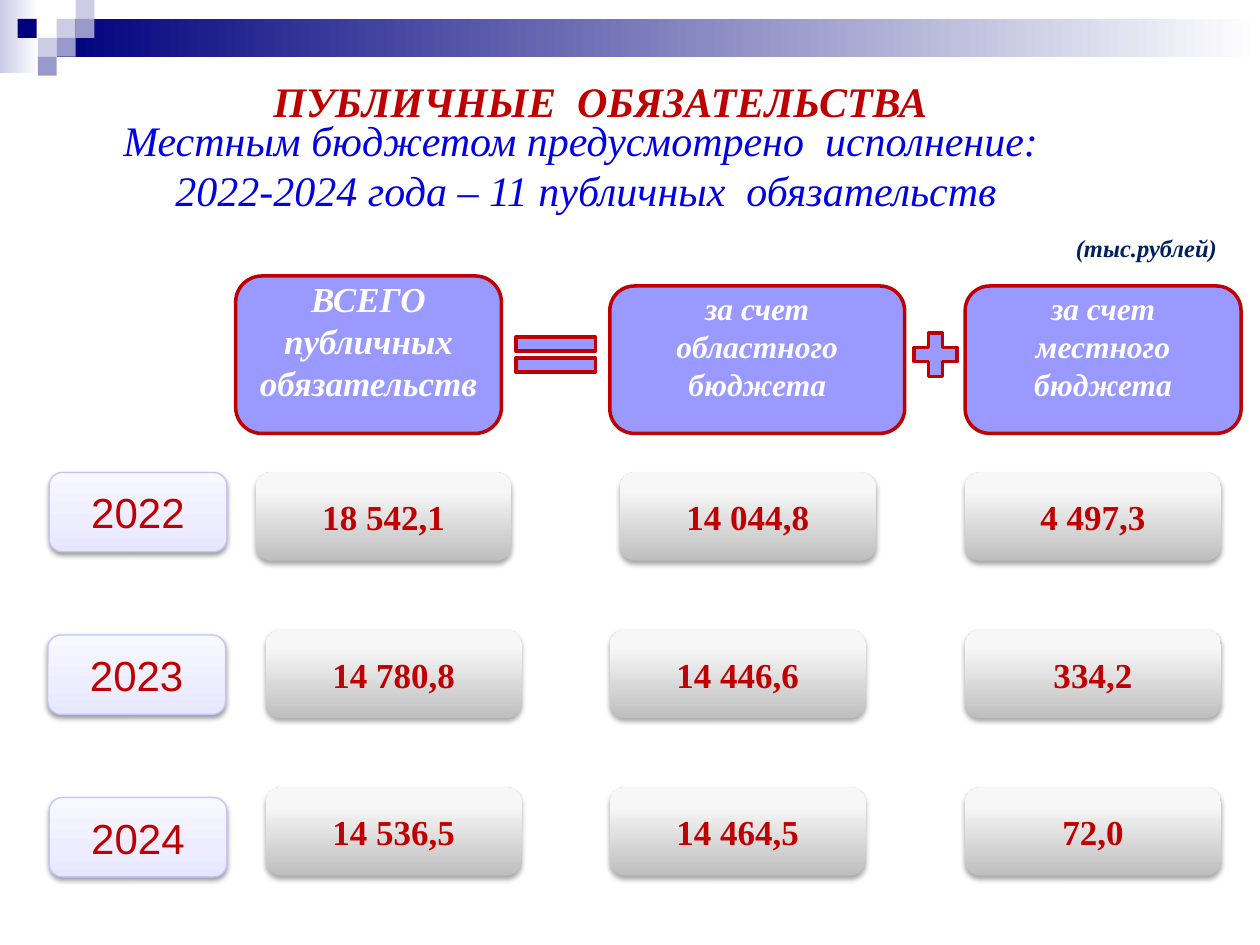
import pptx
import pptx.dml.color
import pptx.enum.shapes
import pptx.enum.text
import pptx.oxml
import pptx.oxml.ns
import pptx.util
from lxml import etree

Inches = pptx.util.Inches
Pt = pptx.util.Pt
RGBColor = pptx.dml.color.RGBColor
Shape = pptx.enum.shapes.MSO_SHAPE
Align = pptx.enum.text.PP_ALIGN
Anchor = pptx.enum.text.MSO_ANCHOR
qn = pptx.oxml.ns.qn

WHITE = RGBColor(0xFF, 0xFF, 0xFF)
NAVY = RGBColor(0x00, 0x00, 0x7D)
PALE = RGBColor(0xCC, 0xCC, 0xE6)
LAVENDER = RGBColor(0x99, 0x99, 0xCC)
VIOLET = RGBColor(0x99, 0x99, 0xFF)
RED = RGBColor(0xC0, 0x00, 0x00)
BLUE = RGBColor(0x00, 0x00, 0xE4)
DARK_BLUE = RGBColor(0x00, 0x20, 0x60)
YEAR_LINE = RGBColor(0xC4, 0xC4, 0xFB)
BLACK = RGBColor(0x00, 0x00, 0x00)
GRAY_STOPS = [(0, RGBColor(0xBE, 0xBE, 0xBE)), (80, RGBColor(0xF7, 0xF7, 0xF7)),
              (100, RGBColor(0xF8, 0xF8, 0xF8))]
YEAR_STOPS = [(0, RGBColor(0xE6, 0xE6, 0xFF)), (35, RGBColor(0xED, 0xED, 0xFF)),
              (100, RGBColor(0xF8, 0xF8, 0xFF))]


def write_text(frame, text, size=20, color=RED, font="Times New Roman", bold=False,
               italic=False, align=Align.CENTER, anchor=Anchor.MIDDLE, wrap=True):
    frame.word_wrap = wrap
    frame.vertical_anchor = anchor
    for index, line in enumerate(text.split("\n")):
        paragraph = frame.paragraphs[0] if index == 0 else frame.add_paragraph()
        paragraph.alignment = align
        run = paragraph.add_run()
        run.text = line
        run.font.name = font
        run.font.size = Pt(size)
        run.font.bold = bold
        run.font.italic = italic
        run.font.color.rgb = color


class BudgetSlide:
    def __init__(self, presentation):
        self.slide = presentation.slides.add_slide(presentation.slide_layouts[5])

    def title(self, box, text, **style):
        shape = self.slide.shapes.title
        shape.left, shape.top, shape.width, shape.height = map(Inches, box)
        write_text(shape.text_frame, text, anchor=Anchor.TOP, **style)

    def label(self, box, text, **style):
        shape = self.slide.shapes.add_textbox(*map(Inches, box))
        write_text(shape.text_frame, text, anchor=Anchor.TOP, **style)

    def block(self, kind, box, fill, line=None, line_width=2):
        shape = self.slide.shapes.add_shape(kind, *map(Inches, box))
        shape.shadow.inherit = False
        shape.fill.solid()
        shape.fill.fore_color.rgb = fill
        if line is None:
            shape.line.fill.background()
        else:
            shape.line.color.rgb = line
            shape.line.width = Pt(line_width)
        return shape

    def gradient(self, shape, stops, angle=0):
        shape.fill.gradient()
        shape.fill.gradient_angle = angle
        stop_list = shape.element.spPr.find(qn("a:gradFill")).find(qn("a:gsLst"))
        for stop in list(stop_list):
            stop_list.remove(stop)
        for position, color in stops:
            stop = etree.SubElement(stop_list, qn("a:gs"), pos=str(position * 1000))
            etree.SubElement(stop, qn("a:srgbClr"), val=str(color))

    def shadow(self, shape, opacity, blur, distance):
        effects = shape.element.spPr.find(qn("a:effectLst"))
        outer = etree.SubElement(effects, qn("a:outerShdw"), blurRad=str(Pt(blur)),
                                 dist=str(Pt(distance)), dir="5400000", rotWithShape="0")
        color = etree.SubElement(outer, qn("a:srgbClr"), val=str(BLACK))
        etree.SubElement(color, qn("a:alpha"), val=str(opacity * 1000))

    def band(self, box, color):
        shape = self.block(Shape.RECTANGLE, box, color)
        self.gradient(shape, [(0, color), (100, WHITE)])

    def heading(self, box, text, size):
        shape = self.block(Shape.ROUNDED_RECTANGLE, box, VIOLET, RED)
        frame = shape.text_frame
        frame.margin_top = 0
        frame.margin_bottom = Inches(0.22)
        write_text(frame, text, size=size, color=WHITE, bold=True, italic=True)

    def year(self, left, top, text):
        shape = self.block(Shape.ROUNDED_RECTANGLE, (left, top, 1.41, 0.63), WHITE, YEAR_LINE, 0.75)
        self.gradient(shape, YEAR_STOPS, 90)
        self.shadow(shape, 38, 3.1, 1.6)
        write_text(shape.text_frame, text, size=24, font="Arial")

    def amount(self, left, top, text):
        shape = self.block(Shape.ROUNDED_RECTANGLE, (left, top, 2.03, 0.7), WHITE)
        self.gradient(shape, GRAY_STOPS, 90)
        self.shadow(shape, 35, 3.1, 1.8)
        write_text(shape.text_frame, text, bold=True)


def main():
    presentation = pptx.Presentation()
    presentation.slide_width = Inches(10)
    presentation.slide_height = Inches(7.5)
    budget = BudgetSlide(presentation)

    budget.band((0, 0, 0.31, 0.58), PALE)
    budget.band((0.45, 0.15, 9.55, 0.3), NAVY)
    for left, top, color in [(0.45, 0.15, PALE), (0.6, 0, PALE), (0.6, 0.15, LAVENDER),
                             (0.3, 0.3, PALE), (0.14, 0.15, NAVY), (0.45, 0.3, LAVENDER),
                             (0.3, 0.45, LAVENDER)]:
        budget.block(Shape.RECTANGLE, (left, top, 0.15, 0.15), color)

    budget.title((0.86, 0.55, 7.81, 0.5), "ПУБЛИЧНЫЕ  ОБЯЗАТЕЛЬСТВА",
                 size=24, bold=True, italic=True)
    budget.label((0.16, 0.86, 8.98, 0.91),
                 "Местным бюджетом предусмотрено  исполнение: \n"
                 "2022-2024 года – 11 публичных  обязательств",
                 size=24, color=BLUE, italic=True)
    budget.label((8.44, 1.8, 1.33, 0.34), "(тыс.рублей)", size=14, color=DARK_BLUE,
                 bold=True, italic=True, align=Align.LEFT, wrap=False)

    budget.heading((1.87, 2.19, 2.11, 1.25), "ВСЕГО\nпубличных\nобязательств", 20)
    budget.heading((4.84, 2.27, 2.34, 1.17), "за счет областного бюджета", 18)
    budget.heading((7.66, 2.27, 2.19, 1.17), "за счет местного\nбюджета", 18)
    budget.block(Shape.MATH_EQUAL, (3.98, 2.58, 0.86, 0.47), VIOLET, RED)
    budget.block(Shape.MATH_PLUS, (7.19, 2.58, 0.47, 0.47), VIOLET, RED)

    rows = [
        ("2022", 0.39, (2.03, 4.92, 7.66), ("18 542,1", "14 044,8", "4 497,3")),
        ("2023", 0.38, (2.11, 4.84, 7.66), ("14 780,8", "14 446,6", "334,2")),
        ("2024", 0.39, (2.11, 4.84, 7.66), ("14 536,5", "14 464,5", "72,0")),
    ]
    for index, (year, year_left, lefts, amounts) in enumerate(rows):
        budget.year(year_left, 3.75 + 1.29 * index, year)
        for left, amount in zip(lefts, amounts):
            budget.amount(left, 3.75 + 1.25 * index, amount)

    presentation.save("out.pptx")


if __name__ == "__main__":
    main()
